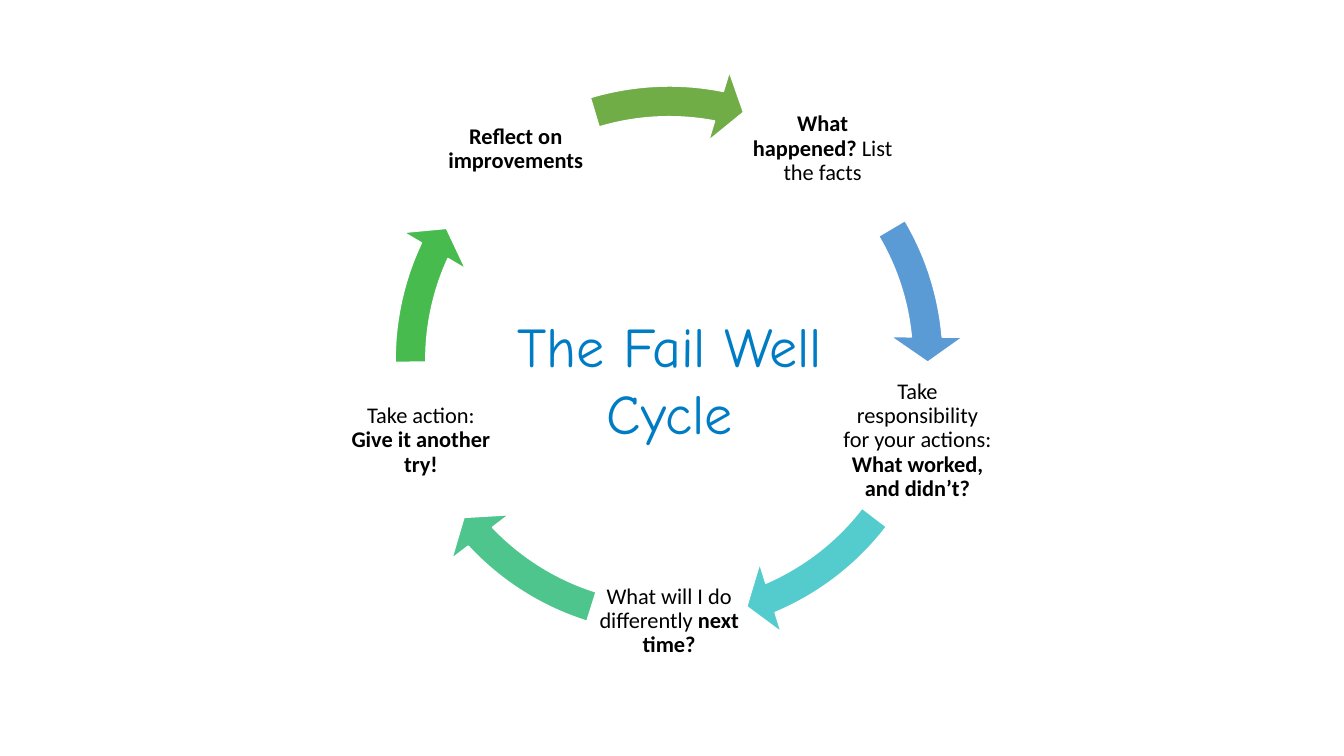
import math

from pptx import Presentation
from pptx import util as u
from pptx.dml.color import RGBColor
from pptx.enum import shapes, text

PX = 914400 / 100.8
BLACK = RGBColor(0x00, 0x00, 0x00)
WHITE = RGBColor(0xFF, 0xFF, 0xFF)
TITLE = RGBColor(0x00, 0x7C, 0xC4)
BLUE = RGBColor(0x5B, 0x9B, 0xD5)
TEAL = RGBColor(0x54, 0xCC, 0xCD)
MINT = RGBColor(0x4D, 0xC5, 0x8D)
GREEN = RGBColor(0x48, 0xBB, 0x4F)
OLIVE = RGBColor(0x70, 0xAD, 0x47)

CENTER = (669, 360)
RADIUS = 261
LABEL = 156
RING = 589

# Runs (text, bold), colour of the arrow that follows, its start and end angle
STEPS = [
    ([("What happened? ", True), ("List the facts", False)],
     BLUE, 329.42, 354.91),
    ([("Take responsibility for your actions: ", False),
      ("What worked, and didn’t?", True)],
     TEAL, 37.53, 66.94),
    ([("What will I do differently ", False), ("next time?", True)],
     MINT, 107.47, 136.88),
    ([("Take action: ", False), ("Give it another try!", True)],
     GREEN, 179.5, 204.99),
    ([("Reflect on improvements", True)],
     OLIVE, 253.29, 281.12),
]


def emu(px):
    return u.Emu(round(px * PX))


def square(x, y, side):
    """Box of a square centred on x, y."""
    return [emu(v) for v in (x - side / 2, y - side / 2, side, side)]


class Cycle:
    font = "Calibri"
    size = 16

    def __init__(self, slide):
        self.slide = slide

    def run(self, para, words, font, size, color, bold=False):
        run = para.add_run()
        run.text = words
        run.font.name = font
        run.font.size = u.Pt(size)
        run.font.color.rgb = color
        run.font.bold = bold

    def title(self, words, x, y, w, h):
        box = self.slide.shapes.title
        box.left, box.top, box.width, box.height = map(emu, (x, y, w, h))
        frame = box.text_frame
        frame.word_wrap = True
        frame.auto_size = text.MSO_AUTO_SIZE.SHAPE_TO_FIT_TEXT
        frame.vertical_anchor = text.MSO_ANCHOR.TOP
        para = frame.paragraphs[0]
        para.alignment = text.PP_ALIGN.CENTER
        self.run(para, words, "Comic Neue", 40, TITLE)

    def label(self, runs, x, y):
        box = self.slide.shapes.add_textbox(*square(x, y, LABEL))
        frame = box.text_frame
        frame.word_wrap = True
        frame.vertical_anchor = text.MSO_ANCHOR.MIDDLE
        frame.margin_left = frame.margin_right = emu(2)
        frame.margin_top = frame.margin_bottom = emu(2)
        para = frame.paragraphs[0]
        para.alignment = text.PP_ALIGN.CENTER
        para.line_spacing = 0.9
        for words, bold in runs:
            self.run(para, words, self.font, self.size, BLACK, bold)

    def arrow(self, color, start, end):
        """Curved arrow on the ring, angles in degrees clockwise from east."""
        arrow = self.slide.shapes.add_shape(
            shapes.MSO_SHAPE.CIRCULAR_ARROW, *square(*CENTER, RING))
        arrow.shadow.inherit = False
        arrow.fill.solid()
        arrow.fill.fore_color.rgb = color
        arrow.line.color.rgb = WHITE
        arrow.line.width = u.Pt(1)
        head = 5.59
        turns = [angle * 0.6 for angle in (head, end, start)]
        for i, value in enumerate([0.052, *turns, 0.061]):
            arrow.adjustments[i] = value


def main():
    deck = Presentation()
    deck.slide_width = u.Inches(13.33)
    deck.slide_height = u.Inches(7.5)
    cycle = Cycle(deck.slides.add_slide(deck.slide_layouts[5]))
    for i, (runs, color, start, end) in enumerate(STEPS):
        angle = math.radians(-54 + i * 360 / len(STEPS))
        cycle.label(runs, CENTER[0] + RADIUS * math.cos(angle),
                    CENTER[1] + RADIUS * math.sin(angle))
        cycle.arrow(color, start, end)
    cycle.title("The Fail Well Cycle", 474, 306, 391, 146)
    deck.save("out.pptx")


if __name__ == "__main__":
    main()
